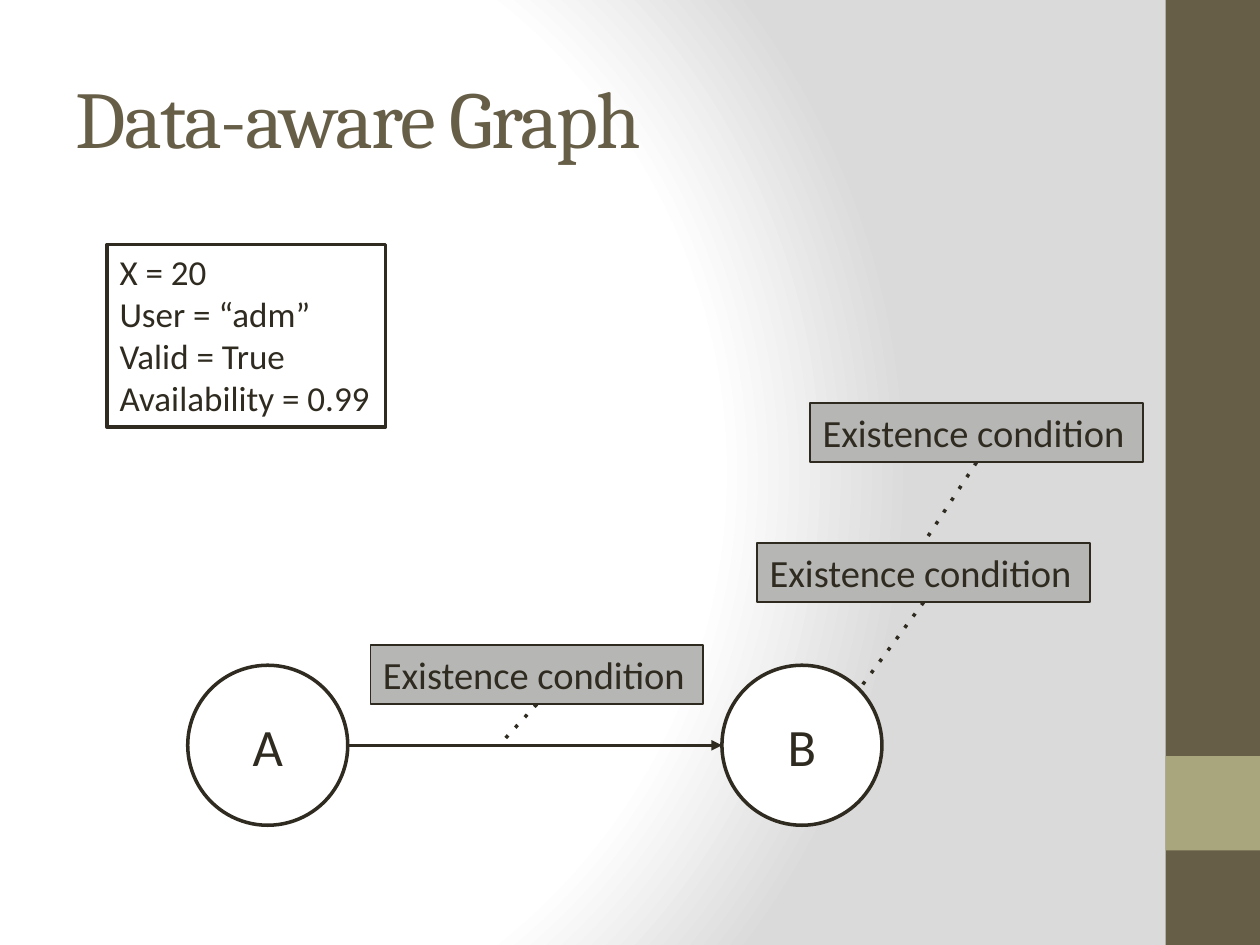
"""Build the Data-aware Graph slide: two nodes, an edge and their existence conditions."""
from dataclasses import dataclass
from typing import Optional

from lxml.etree import SubElement
from pptx import Presentation
from pptx.dml.color import RGBColor
from pptx.enum.shapes import MSO_CONNECTOR as Link, MSO_SHAPE as Preset
from pptx.enum.text import MSO_ANCHOR as Anchor, PP_ALIGN as Align
from pptx.oxml import parse_xml
from pptx.oxml.ns import nsdecls, qn
from pptx.util import Inches, Pt

WIDTH, HEIGHT = 10, 7.5
INK = RGBColor(0x2F, 0x2B, 0x20)
LABEL_EDGE = RGBColor(0x2E, 0x2A, 0x1F)
LABEL_GRAY = RGBColor(0xB6, 0xB6, 0xB5)
BROWN = RGBColor(0x67, 0x5E, 0x47)
OLIVE = RGBColor(0xA9, 0xA5, 0x7C)
WHITE = RGBColor(0xFF, 0xFF, 0xFF)
SILVER = RGBColor(0xDA, 0xDA, 0xDA)
BACKGROUND_STOPS = ((0, WHITE), (75, WHITE), (100, SILVER))

BAND_LEFT, BAND_WIDTH = 0.925 * WIDTH, 0.075 * WIDTH
NODE_SIZE, NODE_TOP = 1.27, 5.28
EDGE_Y = NODE_TOP + NODE_SIZE / 2
LABEL_WIDTH, LABEL_HEIGHT = 2.64, 0.47


@dataclass(frozen=True)
class Box:
    """A filled shape, with lengths in inches and optional outline and text."""
    left: float
    top: float
    width: float
    height: float
    fill: RGBColor
    preset: Preset = Preset.RECTANGLE
    edge: Optional[RGBColor] = None
    edge_width: float = 2
    text: str = ""
    size: float = 20
    centred: bool = False


@dataclass(frozen=True)
class Condition:
    """An existence condition label and the point its dotted line leads to."""
    left: float
    top: float
    target: tuple[float, float]


NODES = (("A", 1.49), ("B", 5.73))
CONDITIONS = (
    Condition(2.94, 5.12, (3.96, EDGE_Y)),
    Condition(6.01, 4.31, (6.82, 5.47)),
    Condition(6.43, 3.2, (7.33, 4.31)),
)


def paint_background(slide) -> None:
    """Fill the background with a circular gradient."""
    slide.background.fill.solid()
    properties = slide.element.find(".//" + qn("p:bgPr"))
    stops = "".join(
        f'<a:gs pos="{share * 1000}"><a:srgbClr val="{color}"/></a:gs>'
        for share, color in BACKGROUND_STOPS
    )
    gradient = parse_xml(
        f'<a:gradFill {nsdecls("a")} rotWithShape="1"><a:gsLst>{stops}</a:gsLst>'
        '<a:path path="circle"><a:fillToRect l="20000" t="50000" r="100000" b="50000"/>'
        "</a:path></a:gradFill>"
    )
    properties.replace(properties[0], gradient)


def draw_title(slide, text: str) -> None:
    """Place and format the title placeholder."""
    title = slide.shapes.title
    title.left, title.top = Inches(0.5), Inches(0.3)
    title.width, title.height = Inches(8.33), Inches(1.25)
    frame = title.text_frame
    frame.text = text
    frame.vertical_anchor = Anchor.MIDDLE
    para = frame.paragraphs[0]
    para.alignment = Align.LEFT
    span = para.runs[0]
    span.font.name, span.font.size = "Cambria", Pt(46)
    span.font.color.rgb = BROWN
    span.font._element.set("spc", "-100")


def draw_box(slide, box: Box) -> None:
    """Draw a box with its text."""
    shape = slide.shapes.add_shape(
        box.preset, Inches(box.left), Inches(box.top), Inches(box.width), Inches(box.height)
    )
    shape.shadow.inherit = False
    shape.fill.solid()
    shape.fill.fore_color.rgb = box.fill
    if box.edge is None:
        shape.line.fill.background()
    else:
        shape.line.color.rgb = box.edge
        shape.line.width = Pt(box.edge_width)
    if not box.text:
        return
    frame = shape.text_frame
    frame.text = box.text
    frame.word_wrap = box.centred
    frame.vertical_anchor = Anchor.MIDDLE if box.centred else Anchor.TOP
    for para in frame.paragraphs:
        para.alignment = Align.CENTER if box.centred else Align.LEFT
        for span in para.runs:
            span.font.name, span.font.size = "Calibri", Pt(box.size)
            span.font.color.rgb = INK


def draw_line(slide, start: tuple[float, float], end: tuple[float, float],
              dotted: bool = False) -> None:
    """Draw a dotted line, or a solid one with an arrowhead at its end."""
    line = slide.shapes.add_connector(Link.STRAIGHT, *map(Inches, start + end))
    line.line.color.rgb = INK
    line.line.width = Pt(2)
    properties = line._element.spPr
    outline = properties.find(qn("a:ln"))
    if dotted:
        SubElement(outline, qn("a:prstDash"), val="dot")
    else:
        SubElement(outline, qn("a:tailEnd"), type="triangle")
    SubElement(properties, qn("a:effectLst"))


def draw_condition(slide, condition: Condition) -> None:
    """Draw a condition label and its dotted line."""
    draw_box(slide, Box(condition.left, condition.top, LABEL_WIDTH, LABEL_HEIGHT, LABEL_GRAY,
                        edge=LABEL_EDGE, edge_width=1, text="Existence condition", size=22))
    start = (condition.left + LABEL_WIDTH / 2, condition.top + LABEL_HEIGHT)
    draw_line(slide, start, condition.target, dotted=True)


def main() -> None:
    """Build and save the deck."""
    deck = Presentation()
    deck.slide_width, deck.slide_height = Inches(WIDTH), Inches(HEIGHT)
    slide = deck.slides.add_slide(deck.slide_layouts.get_by_name("Title Only"))
    paint_background(slide)
    draw_box(slide, Box(BAND_LEFT, 0, BAND_WIDTH, HEIGHT, BROWN))
    draw_box(slide, Box(BAND_LEFT, 0.8 * HEIGHT, BAND_WIDTH, BAND_WIDTH, OLIVE))
    draw_title(slide, "Data-aware Graph")
    draw_box(slide, Box(0.85, 1.94, 2.21, 1.45, WHITE, edge=INK,
                        text="X = 20\nUser = “adm”\nValid = True\nAvailability = 0.99"))
    for name, left in NODES:
        draw_box(slide, Box(left, NODE_TOP, NODE_SIZE, NODE_SIZE, WHITE, Preset.OVAL, INK,
                            text=name, size=30, centred=True))
    (_, source_left), (_, target_left) = NODES
    draw_line(slide, (source_left + NODE_SIZE, EDGE_Y), (target_left, EDGE_Y))
    for condition in CONDITIONS:
        draw_condition(slide, condition)
    deck.save("out.pptx")


if __name__ == "__main__":
    main()
